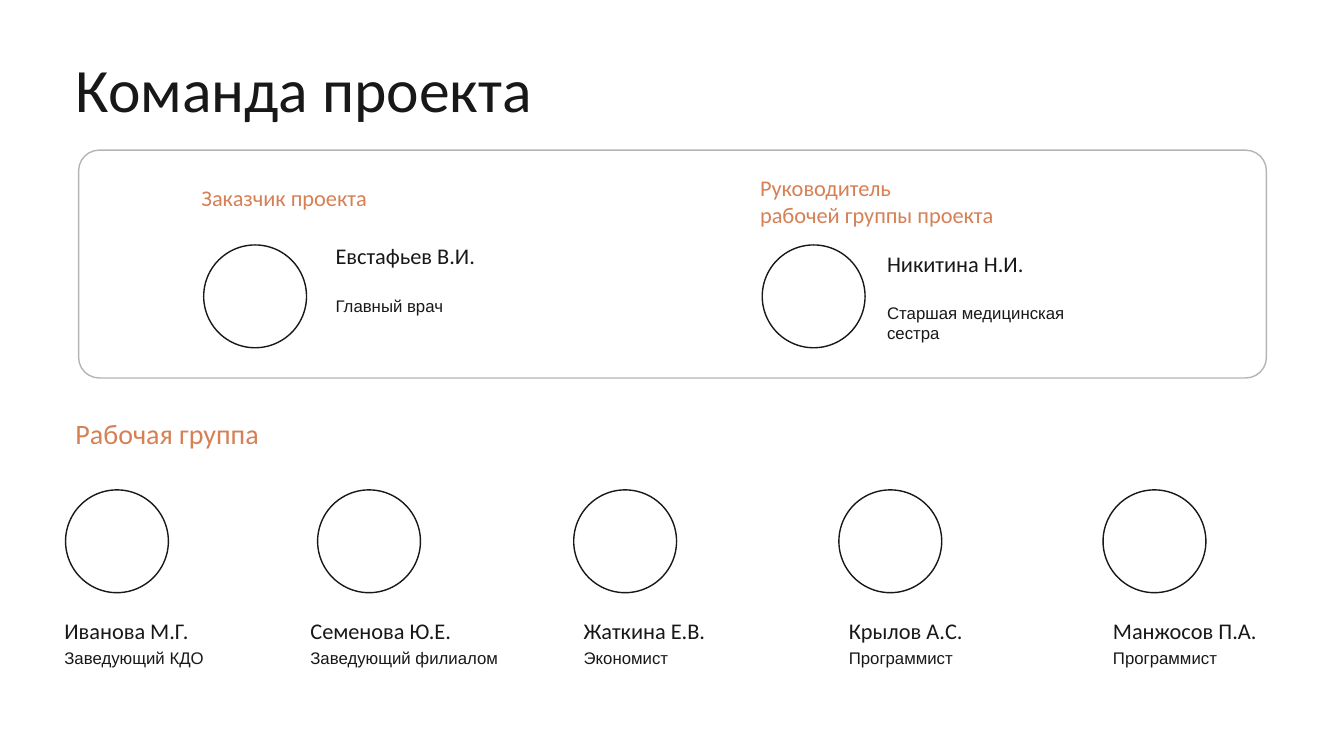
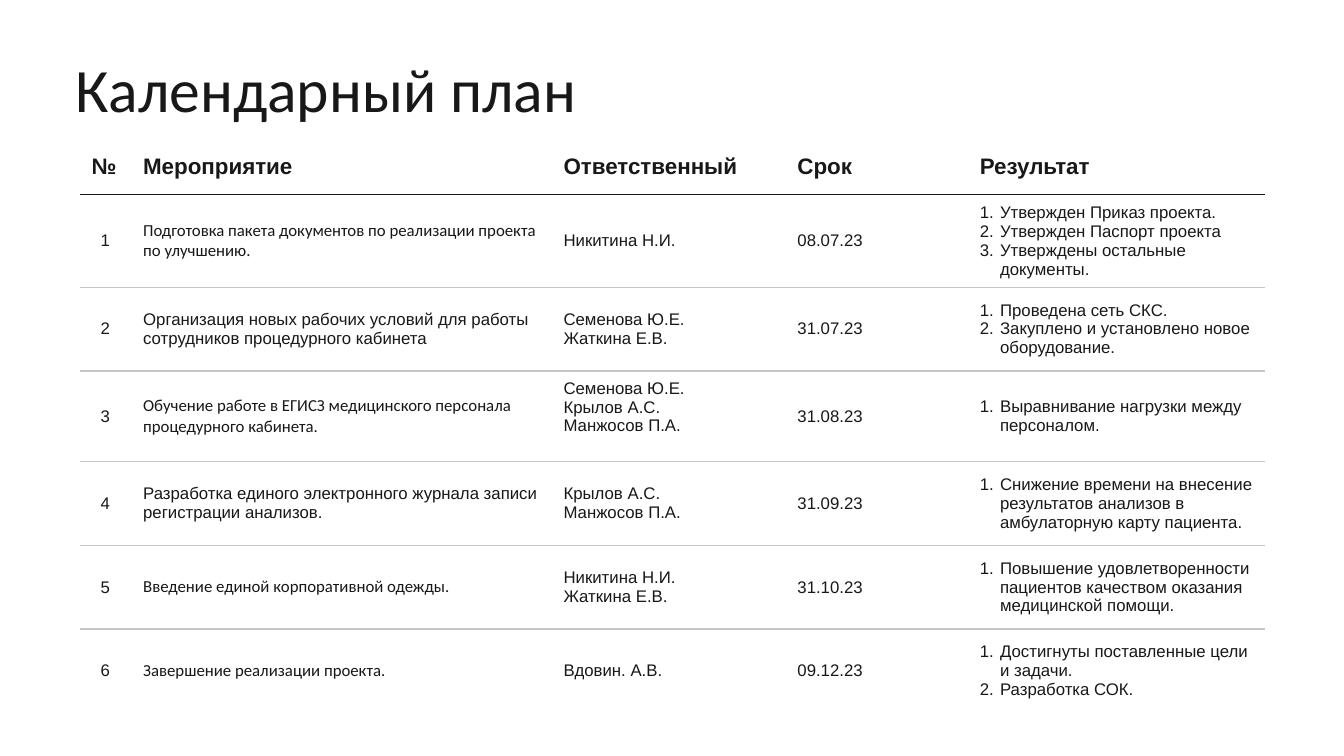
from dataclasses import dataclass

from lxml import etree
from pptx import Presentation
from pptx.dml.color import RGBColor
from pptx.enum.shapes import MSO_SHAPE
from pptx.enum.text import MSO_ANCHOR, PP_ALIGN
from pptx.oxml.ns import qn
from pptx.util import Inches, Pt


@dataclass(frozen=True)
class Theme:
    ink: str = "181818"
    accent: str = "D58055"
    frame: str = "B5B5B5"
    rule: str = "C5C5C5"
    heading_font: str = "Calibri"
    body_font: str = "Arial"
    title_size: int = 44
    section_size: int = 20
    name_size: int = 16
    body_size: int = 12


THEME = Theme()
PORTRAIT = 1.02
NO_GRID_STYLE = "{2D5ABB26-0587-4C30-8999-92F81FD0307C}"

# name, role, left of portrait, left of caption
WORKING_GROUP = [
    ("Иванова М.Г.", "Заведующий КДО", 0.65, 0.54),
    ("Семенова Ю.Е.", "Заведующий филиалом", 3.15, 2.98),
    ("Жаткина Е.В.", "Экономист", 5.69, 5.69),
    ("Крылов А.С.", "Программист", 8.32, 8.32),
    ("Манжосов П.А.", "Программист", 10.94, 10.94),
]

COLUMN_WIDTHS = [0.51, 4.17, 2.32, 1.81, 2.95]
HEADER_HEIGHT = 0.55
STAGE_HEIGHT = 0.83
HEADINGS = ["№", "Мероприятие", "Ответственный", "Срок", "Результат"]
# activity, its font, people responsible, deadline, results
STAGES = [
    ("Подготовка пакета документов по реализации проекта по улучшению.",
     THEME.heading_font, ["Никитина Н.И."], "08.07.23",
     ["Утвержден Приказ проекта.", "Утвержден Паспорт проекта",
      "Утверждены остальные документы."]),
    ("Организация новых рабочих условий для работы сотрудников процедурного кабинета",
     THEME.body_font, ["Семенова Ю.Е.", "Жаткина Е.В."], "31.07.23",
     ["Проведена сеть СКС.", "Закуплено и установлено новое оборудование."]),
    ("Обучение работе в ЕГИСЗ медицинского персонала процедурного кабинета.",
     THEME.heading_font, ["Семенова Ю.Е.", "Крылов А.С.", "Манжосов П.А."], "31.08.23",
     ["Выравнивание нагрузки между персоналом."]),
    ("Разработка единого электронного журнала записи регистрации анализов.",
     THEME.body_font, ["Крылов А.С.", "Манжосов П.А."], "31.09.23",
     ["Снижение времени на внесение результатов анализов в амбулаторную карту пациента."]),
    ("Введение единой корпоративной одежды.",
     THEME.heading_font, ["Никитина Н.И.", "Жаткина Е.В."], "31.10.23",
     ["Повышение удовлетворенности пациентов качеством оказания медицинской помощи."]),
    ("Завершение реализации проекта.",
     THEME.heading_font, ["Вдовин. А.В."], "09.12.23",
     ["Достигнуты поставленные цели и задачи.", "Разработка СОК."]),
]


def write(frame, lines, size, font, color=THEME.ink, bold=False):
    """Fill a text frame with one paragraph per line."""
    frame.word_wrap = True
    frame.text = "\n".join(lines)
    for paragraph in frame.paragraphs:
        paragraph.font.size = Pt(size)
        paragraph.font.name = font
        paragraph.font.bold = bold
        paragraph.font.color.rgb = RGBColor.from_string(color)


def add_text(slide, left, top, width, height, lines, size, font, color=THEME.ink):
    box = slide.shapes.add_textbox(Inches(left), Inches(top), Inches(width), Inches(height))
    write(box.text_frame, lines, size, font, color)
    return box.text_frame


def add_outline(slide, preset, left, top, width, height, color):
    shape = slide.shapes.add_shape(
        preset, Inches(left), Inches(top), Inches(width), Inches(height))
    shape.shadow.inherit = False
    shape.fill.background()
    shape.line.color.rgb = RGBColor.from_string(color)
    shape.line.width = Pt(1)
    return shape


def add_titled_slide(deck, title):
    slide = deck.slides.add_slide(deck.slide_layouts[6])
    frame = add_text(slide, 0.65, 0.52, 12, 0.79, [title],
                     THEME.title_size, THEME.heading_font)
    frame.vertical_anchor = MSO_ANCHOR.MIDDLE
    frame.paragraphs[0].line_spacing = 0.9
    return slide


def add_heading(slide, left, top, height, lines, size=THEME.name_size):
    add_text(slide, left, top, 3.09, height, lines, size, THEME.heading_font, THEME.accent)


def add_person(slide, name, role, portrait, caption, role_top):
    """Draw a round portrait frame with a name and a role; places are (left, top)."""
    add_outline(slide, MSO_SHAPE.OVAL, *portrait, PORTRAIT, PORTRAIT, THEME.ink)
    left, top = caption
    add_text(slide, left, top, 2.29, 0.37, [name], THEME.name_size, THEME.heading_font)
    add_text(slide, left, role_top, 2.29, 0.3, [role], THEME.body_size, THEME.body_font)


def add_team_slide(deck):
    slide = add_titled_slide(deck, "Команда проекта")
    panel = add_outline(slide, MSO_SHAPE.ROUNDED_RECTANGLE, 0.78, 1.49, 11.78, 2.26, THEME.frame)
    panel.adjustments[0] = 0.09

    add_heading(slide, 1.9, 1.78, 0.37, ["Заказчик проекта"])
    add_person(slide, "Евстафьев В.И.", "Главный врач", (2.02, 2.43), (3.23, 2.35), 2.88)
    add_heading(slide, 7.44, 1.68, 0.64, ["Руководитель", "рабочей группы проекта"])
    add_person(slide, "Никитина Н.И.", "Старшая медицинская сестра",
               (7.56, 2.43), (8.7, 2.43), 2.95)

    add_heading(slide, 0.65, 4.08, 0.44, ["Рабочая группа"], THEME.section_size)
    for name, role, portrait_left, caption_left in WORKING_GROUP:
        add_person(slide, name, role, (portrait_left, 4.86), (caption_left, 6.07), 6.38)


def set_border(cell, side, color, width):
    properties = cell._tc.get_or_add_tcPr()
    border = etree.Element(qn(f"a:{side}"), w=str(Pt(width)))
    fill = etree.SubElement(border, qn("a:solidFill"))
    etree.SubElement(fill, qn("a:srgbClr"), val=color)
    properties.insert(0, border)


def number_paragraphs(frame):
    for paragraph in frame.paragraphs:
        properties = paragraph._p.get_or_add_pPr()
        properties.set("marL", str(Inches(0.2)))
        properties.set("indent", str(-Inches(0.2)))
        etree.SubElement(properties, qn("a:buFont"), typeface="+mj-lt")
        etree.SubElement(properties, qn("a:buAutoNum"), type="arabicPeriod")
        # the default run properties must come last
        properties.append(properties.find(qn("a:defRPr")))


def fill_cell(cell, lines, size=THEME.body_size, font=THEME.body_font, bold=False):
    cell.fill.background()
    cell.vertical_anchor = MSO_ANCHOR.MIDDLE
    cell.margin_left = cell.margin_right = Inches(0.12)
    cell.margin_top = cell.margin_bottom = Inches(0.06)
    write(cell.text_frame, lines, size, font, bold=bold)


def rule_rows(table):
    """Draw a dark line below the header and grey lines between the stages."""
    last = len(table.rows) - 1
    for index in range(last):
        color, width = (THEME.ink, 1.5) if index == 0 else (THEME.rule, 1)
        for column in range(len(table.columns)):
            set_border(table.cell(index, column), "lnB", color, width)
            set_border(table.cell(index + 1, column), "lnT", color, width)


def add_plan_slide(deck):
    slide = add_titled_slide(deck, "Календарный план")
    height = HEADER_HEIGHT + STAGE_HEIGHT * len(STAGES)
    plan = slide.shapes.add_table(
        len(STAGES) + 1, len(HEADINGS), Inches(0.79), Inches(1.38),
        Inches(sum(COLUMN_WIDTHS)), Inches(height)).table
    plan.first_row = plan.horz_banding = False
    plan._tbl.tblPr.find(qn("a:tableStyleId")).text = NO_GRID_STYLE
    for column, width in zip(plan.columns, COLUMN_WIDTHS):
        column.width = Inches(width)
    for index, row in enumerate(plan.rows):
        row.height = Inches(STAGE_HEIGHT if index else HEADER_HEIGHT)

    for cell, heading in zip(plan.rows[0].cells, HEADINGS):
        fill_cell(cell, [heading], THEME.name_size, bold=True)
    for index, (activity, font, people, deadline, results) in enumerate(STAGES, 1):
        number, task, responsible, due, outcome = plan.rows[index].cells
        fill_cell(number, [str(index)])
        number.text_frame.paragraphs[0].alignment = PP_ALIGN.CENTER
        fill_cell(task, [activity], font=font)
        fill_cell(responsible, people)
        if len(people) > 2:
            responsible.margin_bottom = Inches(0.24)
        fill_cell(due, [deadline])
        fill_cell(outcome, results)
        number_paragraphs(outcome.text_frame)
    rule_rows(plan)


def main():
    deck = Presentation()
    deck.slide_width = Inches(13.33)
    deck.slide_height = Inches(7.5)
    add_team_slide(deck)
    add_plan_slide(deck)
    deck.save("out.pptx")


if __name__ == "__main__":
    main()
